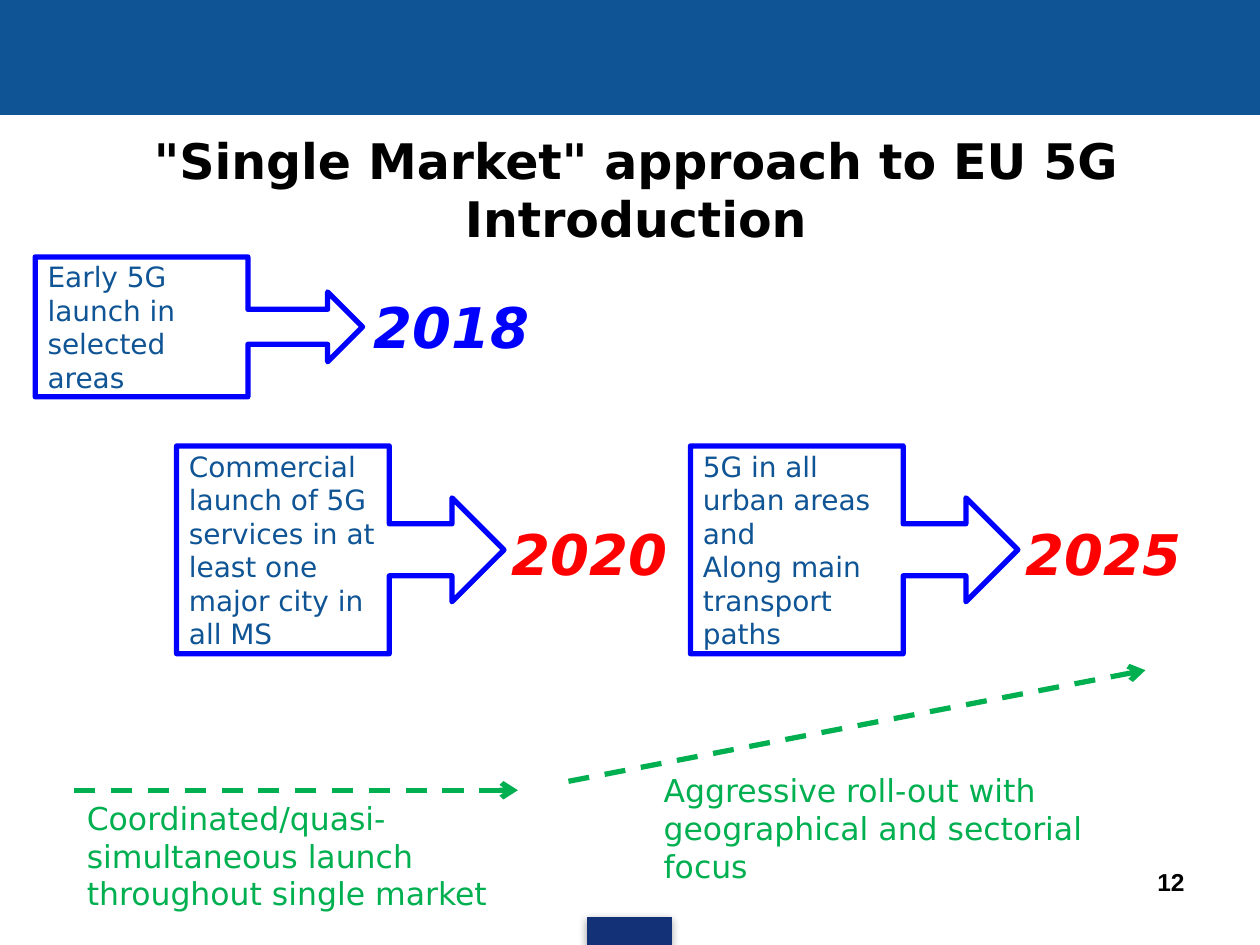
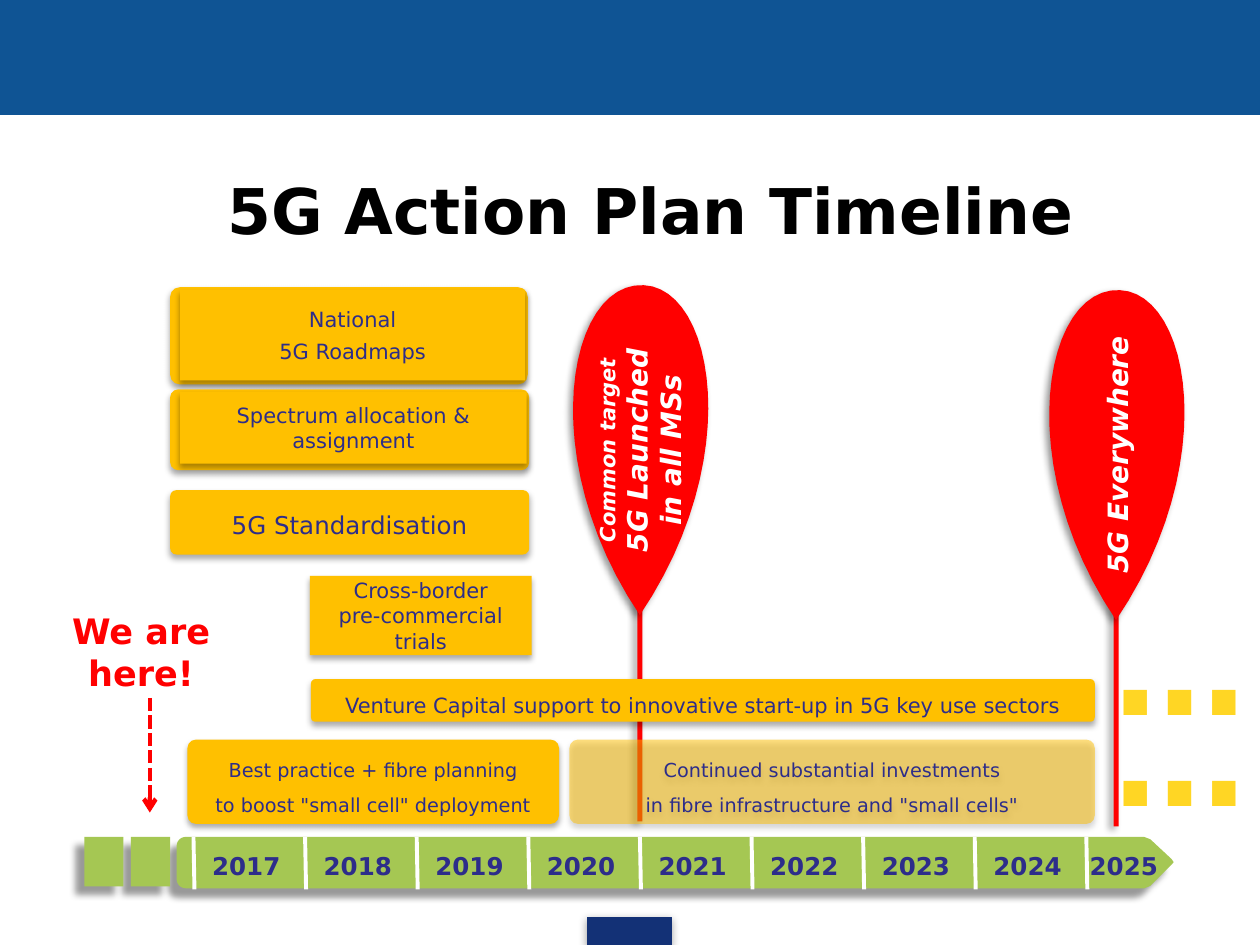
from dataclasses import dataclass, field
from typing import Optional

from lxml.etree import SubElement
from pptx import Presentation
from pptx.dml.color import RGBColor
from pptx.enum.dml import MSO_LINE
from pptx.enum.shapes import MSO_CONNECTOR, MSO_SHAPE
from pptx.enum.text import MSO_ANCHOR, MSO_AUTO_SIZE, PP_ALIGN
from pptx.oxml.ns import qn
from pptx.util import Cm, Pt

BAND_BLUE = RGBColor(0x0F, 0x54, 0x94)
TAB_BLUE = RGBColor(0x13, 0x31, 0x76)
CALLOUT_BLUE = RGBColor(0x00, 0x00, 0xFF)
INK = RGBColor(0x2D, 0x2D, 0x8A)
BLACK = RGBColor(0, 0, 0)
WHITE = RGBColor(0xFF, 0xFF, 0xFF)
RED = RGBColor(0xFF, 0, 0)
GREEN = RGBColor(0x00, 0xB0, 0x50)
AMBER = RGBColor(0xFF, 0xC0, 0x00)
YELLOW = RGBColor(0xFF, 0xD6, 0x24)
LIME = RGBColor(0xA5, 0xC7, 0x53)
FONT = "DejaVu Sans"


@dataclass(frozen=True)
class Shadow:
    """Outer shadow: opacity in percent, blur and distance in points, angle."""
    opacity: int
    blur: float
    distance: float
    angle: int


TAB_SHADOW = Shadow(35, 5, 1.8, 90)
CARD_SHADOW = Shadow(32, 3.5, 2.2, 90)
BAR_SHADOW = Shadow(40, 4, 7, 135)
PIN_SHADOW = Shadow(40, 4, 3, 135)


@dataclass
class Text:
    """Paragraphs with one format."""
    lines: list[str]
    size: float
    color: RGBColor
    bold: bool = False
    italic: bool = False
    font: str = FONT
    align: PP_ALIGN = PP_ALIGN.LEFT
    anchor: MSO_ANCHOR = MSO_ANCHOR.TOP
    inset: Optional[tuple[float, float]] = None
    wrap: bool = True
    para: dict = field(default_factory=dict)
    first_size: Optional[float] = None


@dataclass
class Box:
    """A preset shape placed in centimetres."""
    x: float
    y: float
    w: float
    h: float
    kind: MSO_SHAPE = MSO_SHAPE.RECTANGLE
    fill: Optional[RGBColor] = None
    line: Optional[RGBColor] = None
    width: float = 0.75
    shadow: Optional[Shadow] = None
    text: Optional[Text] = None
    opacity: int = 100


def apply(target, values: dict) -> None:
    """Set every attribute named in a dict."""
    for name, value in values.items():
        setattr(target, name, value)


def write(tf, text: Text) -> None:
    """Fill a text frame."""
    apply(tf, {"word_wrap": text.wrap, "vertical_anchor": text.anchor})
    if text.inset:
        across, down = map(Cm, text.inset)
        apply(tf, {"margin_left": across, "margin_right": across,
                   "margin_top": down, "margin_bottom": down})
    for i, line in enumerate(text.lines):
        p = tf.paragraphs[0] if i == 0 else tf.add_paragraph()
        p.alignment = text.align
        apply(p, text.para)
        r = p.add_run()
        r.text = line
        size = text.first_size if i == 0 and text.first_size else text.size
        apply(r.font, {"name": text.font, "size": Pt(size),
                       "bold": text.bold, "italic": text.italic})
        r.font.color.rgb = text.color


def cast_shadow(sp, shadow: Optional[Shadow]) -> None:
    """Replace the theme shadow."""
    sp.shadow.inherit = False
    if shadow:
        effects = sp._element.spPr.find(qn("a:effectLst"))
        outer = SubElement(effects, qn("a:outerShdw"), {
            "blurRad": str(Pt(shadow.blur)), "dist": str(Pt(shadow.distance)),
            "dir": str(shadow.angle * 60000), "rotWithShape": "0"})
        color = SubElement(outer, qn("a:srgbClr"), val=str(BLACK))
        SubElement(color, qn("a:alpha"), val=str(shadow.opacity * 1000))


def paint(sp, fill: Optional[RGBColor], line: Optional[RGBColor] = None, width: float = 0.75,
          shadow: Optional[Shadow] = None, opacity: int = 100) -> None:
    """Set fill, outline and shadow."""
    if fill is None:
        sp.fill.background()
    else:
        sp.fill.solid()
        sp.fill.fore_color.rgb = fill
        if opacity < 100:
            color = sp._element.spPr.find(qn("a:solidFill"))[0]
            SubElement(color, qn("a:alpha"), val=str(opacity * 1000))
    if line is None:
        sp.line.fill.background()
    else:
        sp.line.color.rgb = line
        sp.line.width = Pt(width)
    cast_shadow(sp, shadow)


def draw_box(s, box: Box) -> None:
    """Draw a preset shape with its text."""
    sp = s.shapes.add_shape(box.kind, *map(Cm, (box.x, box.y, box.w, box.h)))
    if box.kind == MSO_SHAPE.ROUNDED_RECTANGLE:
        sp.adjustments[0] = 0.1
    paint(sp, box.fill, box.line, box.width, box.shadow, box.opacity)
    if box.text:
        write(sp.text_frame, box.text)


def draw_label(s, x: float, y: float, w: float, h: float, text: Text) -> None:
    """Draw a text box."""
    tf = s.shapes.add_textbox(*map(Cm, (x, y, w, h))).text_frame
    write(tf, text)
    tf.auto_size = MSO_AUTO_SIZE.SHAPE_TO_FIT_TEXT


def draw_line(s, start: tuple[float, float], end: tuple[float, float], color: RGBColor,
              width: float, dash: Optional[MSO_LINE] = None) -> None:
    """Draw a plain line, or an arrow when dashed."""
    c = s.shapes.add_connector(MSO_CONNECTOR.STRAIGHT, *map(Cm, start + end))
    c.line.color.rgb = color
    c.line.width = Pt(width)
    if dash:
        c.line.dash_style = dash
        SubElement(c.line._get_or_add_ln(), qn("a:tailEnd"), type="arrow")
    SubElement(c._element.spPr, qn("a:effectLst"))


def bezier(a, b, c, d, steps: int = 24) -> list[tuple[float, float]]:
    """Sample a cubic curve."""
    points = []
    for i in range(steps + 1):
        t = i / steps
        weights = ((1 - t) ** 3, 3 * t * (1 - t) ** 2, 3 * t * t * (1 - t), t ** 3)
        points.append(tuple(sum(k * q[axis] for k, q in zip(weights, (a, b, c, d)))
                            for axis in (0, 1)))
    return points


def draw_outline(s, points: list[tuple[float, float]], fill: RGBColor, shadow: Shadow):
    """Draw a closed outline."""
    emu = [(Cm(x), Cm(y)) for x, y in points]
    builder = s.shapes.build_freeform(*emu[0])
    builder.add_line_segments(emu[1:], close=True)
    sp = builder.convert_to_shape()
    paint(sp, fill, shadow=shadow)
    return sp


def draw_pin(s, x: float, y: float, text: Text) -> None:
    """Draw a target pin with its tip at x, y."""
    draw_box(s, Box(x - 0.05, y - 2.54, 0.1, 6.7, fill=RED, shadow=PIN_SHADOW))
    top, tip = (x + 0.08, y - 6.65), (x, y)
    right = bezier(top, (x + 1.5, y - 6.58), (x + 2.13, y - 3.15), tip)
    left = bezier(tip, (x - 2.13, y - 3.15), (x - 1.45, y - 6.73), top)
    sp = draw_outline(s, right + left[1:], RED, PIN_SHADOW)
    write(sp.text_frame, text)
    sp.text_frame._txBody.bodyPr.set("vert", "vert270")


def add_slide(prs):
    """Add a slide with the shared band and footer tab."""
    s = prs.slides.add_slide(prs.slide_layouts[6])
    draw_box(s, Box(0, 0, 25.4, 2.31, fill=BAND_BLUE, line=BAND_BLUE))
    draw_box(s, Box(11.84, 18.49, 1.7, 0.56, fill=TAB_BLUE, line=TAB_BLUE, shadow=TAB_SHADOW))
    return s


def draw_title(s, x: float, y: float, h: float, title: str, size: float) -> None:
    """Draw the slide title."""
    draw_label(s, x, y, 23.85, h, Text([title], size, BLACK, bold=True, align=PP_ALIGN.CENTER,
                                       anchor=MSO_ANCHOR.MIDDLE))


def build_approach(prs) -> None:
    """Build the launch steps slide."""
    s = add_slide(prs)
    draw_label(s, 18.21, 17.35, 5.92, 1.32,
               Text(["12"], 14, BLACK, bold=True, font="Arial", align=PP_ALIGN.RIGHT))
    draw_title(s, 0.89, 2.49, 2.64, '"Single Market" approach to EU 5G Introduction', 28)
    steps = [
        (3.56, 8.99, 4.19, ["Commercial launch of 5G services in at least one major city in all MS"]),
        (0.71, 5.18, 2.82, ["Early 5G launch in selected areas"]),
        (13.92, 8.99, 4.19, ["5G in all urban areas and", "Along main transport paths"]),
    ]
    for x, y, h, lines in steps:
        draw_box(s, Box(x, y, 6.6, h, MSO_SHAPE.RIGHT_ARROW_CALLOUT, line=CALLOUT_BLUE, width=3,
                        text=Text(lines, 16, BAND_BLUE, anchor=MSO_ANCHOR.MIDDLE)))
    years = [(7.29, 5.77, "2018", CALLOUT_BLUE), (20.42, 10.34, "2025", RED),
             (10.06, 10.34, "2020", RED)]
    for x, y, year, color in years:
        draw_label(s, x, y, 4.2, 1.63, Text([year], 32, color, bold=True, italic=True))
    phases = [
        ((1.5, 15.93), (10.44, 15.93), (1.5, 15.98),
         "Coordinated/quasi-simultaneous launch throughout single market"),
        ((11.46, 15.75), (23.09, 13.51), (13.13, 15.42),
         "Aggressive roll-out with geographical and sectorial focus"),
    ]
    for start, end, corner, phrase in phases:
        draw_line(s, start, end, GREEN, 3, MSO_LINE.DASH)
        draw_label(s, *corner, 9.4, 2.57, Text([phrase], 18, GREEN))


def card(x: float, y: float, w: float, h: float, lines: list[str], size: float = 12,
         rounded: bool = True, opacity: int = 100, para: Optional[dict] = None) -> Box:
    """Describe an amber activity card."""
    if para is None:
        para = {"line_spacing": Pt(20)} if rounded else {}
    text = Text(lines, size, INK, align=PP_ALIGN.CENTER, anchor=MSO_ANCHOR.MIDDLE,
                inset=None if rounded else (0.43, 0.43), para=para) if lines else None
    kind = MSO_SHAPE.ROUNDED_RECTANGLE if rounded else MSO_SHAPE.RECTANGLE
    return Box(x, y, w, h, kind, AMBER, shadow=CARD_SHADOW, text=text, opacity=opacity)


def draw_year_bar(s) -> None:
    """Draw the year axis."""
    top, bottom, left = 16.87, 17.91, 3.56
    upper = bezier((left + 0.2, top), (left + 0.08, top), (left, top + 0.08), (left, top + 0.2), 6)
    lower = [(x, top + bottom - y) for x, y in reversed(upper)]
    nose = [(23.06, bottom), (23.19, 17.86), (23.62, 17.43), (23.66, 17.38), (23.62, 17.32),
            (23.19, 16.92), (23.06, top)]
    draw_outline(s, upper + lower + nose, LIME, BAR_SHADOW)
    for i in range(9):
        x = 3.9 + 2.25 * i
        draw_line(s, (x, top), (x + 0.02, 17.93), WHITE, 2.25)
        year_x = 4.05 + 2.25 * i if i < 8 else 21.74
        draw_label(s, year_x, 17.02, 1.83, 0.86,
                   Text([str(2017 + i)], 14, INK, bold=True, align=PP_ALIGN.CENTER,
                        inset=(0.2, 0.13), wrap=False))
    for x in (2.64, 1.7):
        draw_box(s, Box(x, top, 0.79, 1, fill=LIME, shadow=BAR_SHADOW))


def build_timeline(prs) -> None:
    """Build the action plan timeline slide."""
    s = add_slide(prs)
    draw_year_bar(s)
    pin_style = {"size": 16, "color": WHITE, "bold": True, "italic": True,
                 "align": PP_ALIGN.CENTER, "anchor": MSO_ANCHOR.MIDDLE}
    draw_pin(s, 22.5, 12.5, Text(["5G Everywhere"], **pin_style))
    draw_pin(s, 12.9, 12.4, Text(["Common target", "5G Launched", "in all MSs"],
                                 first_size=12, **pin_style))
    draw_line(s, (3.02, 14.07), (3.02, 16.38), RED, 2.5, MSO_LINE.SQUARE_DOT)
    draw_label(s, 1.17, 12.17, 3.35, 1.96,
               Text(["We are", "here!"], 20, RED, bold=True, align=PP_ALIGN.CENTER, wrap=False))
    draw_title(s, 1.19, 3.33, 1.8, "5G Action Plan Timeline", 36)
    cards = [
        card(3.43, 5.79, 7.21, 1.96, []),
        card(3.63, 5.84, 6.96, 1.83, ["National", "5G Roadmaps"], rounded=False,
             para={"space_after": Pt(4)}),
        card(3.43, 7.85, 7.24, 1.63, []),
        card(3.63, 7.9, 6.99, 1.45, ["Spectrum allocation & assignment"], rounded=False),
        card(3.78, 14.91, 7.49, 1.7,
             ["Best practice + fibre planning", 'to boost "small cell" deployment'], 11),
        card(6.25, 11.61, 4.47, 1.6, ["Cross-border", "pre-commercial", "trials"], rounded=False),
        card(3.43, 9.88, 7.24, 1.3, ["5G Standardisation"], 14),
        card(6.27, 13.69, 15.8, 0.86,
             ["Venture Capital support to innovative start-up in 5G key use sectors"]),
        card(11.48, 14.91, 10.59, 1.7, ["Continued substantial investments",
                                        'in fibre infrastructure and "small cells"'], 11, opacity=50),
    ]
    for box in cards:
        draw_box(s, box)
    for y in (11.61, 13.46):
        draw_label(s, 22.2, y, 3.45, 3.51, Text(["…"], 76, YELLOW, bold=True, wrap=False))


def main() -> None:
    """Build and save the presentation."""
    prs = Presentation()
    apply(prs, {"slide_width": Cm(25.4), "slide_height": Cm(19.05)})
    build_approach(prs)
    build_timeline(prs)
    prs.save("out.pptx")


if __name__ == "__main__":
    main()
